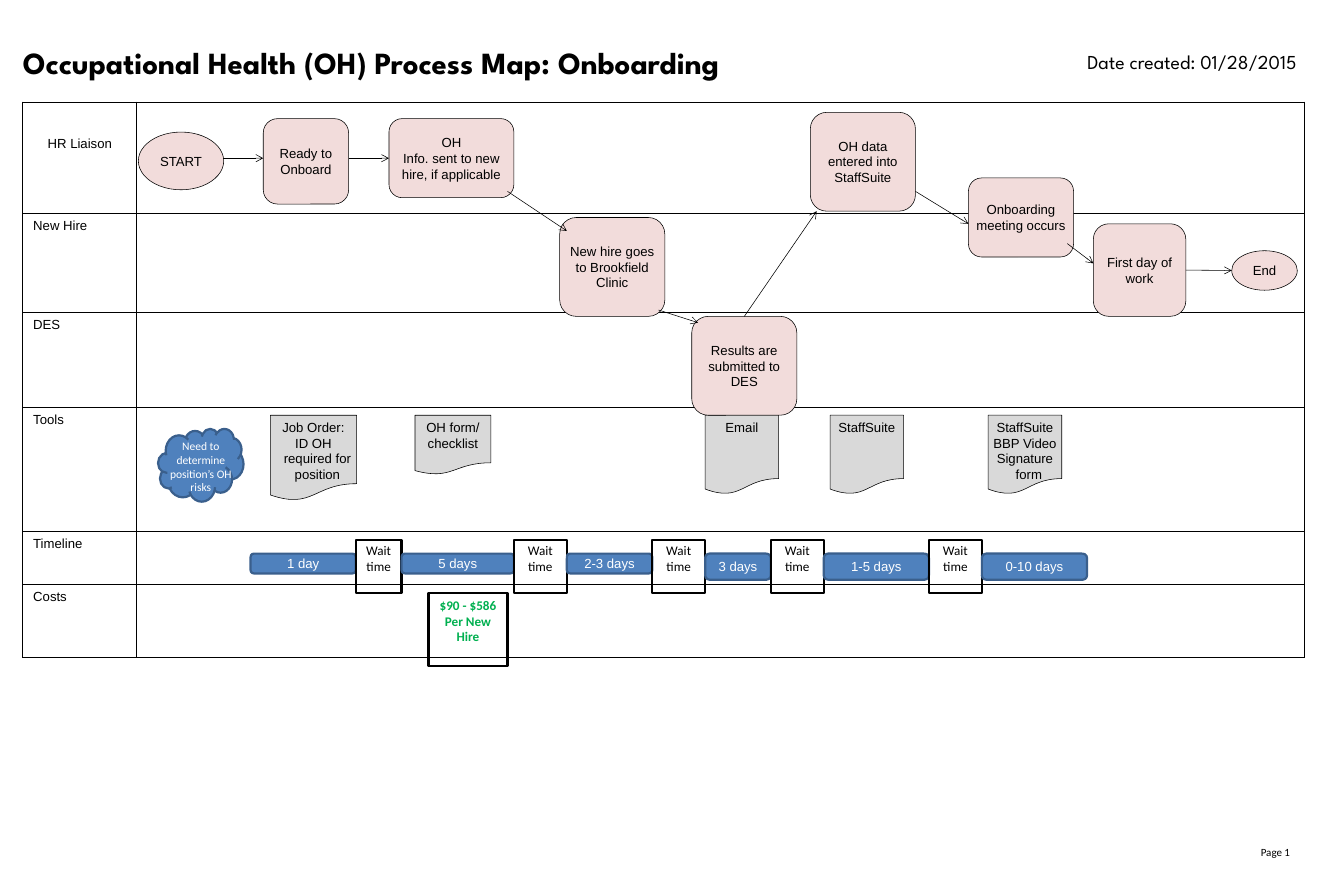
from pptx import Presentation
from pptx.dml.color import RGBColor
from pptx.enum.shapes import MSO_CONNECTOR as Conn, MSO_SHAPE as Kind
from pptx.enum.text import MSO_ANCHOR as Anchor, MSO_AUTO_SIZE as Auto, PP_ALIGN as Align
from pptx.oxml import parse_xml
from pptx.oxml.ns import nsdecls
from pptx.util import Inches, Pt

BLACK, WHITE, GREEN = "000000", "FFFFFF", "00B050"
PINK, GREY, BLUE, NAVY = "F2DCDB", "D9D9D9", "4F81BD", "3A5F8C"
BRAND = "League Spartan"


def color(code):
    return RGBColor.from_string(code)


def xml(tag, attrs="", body=""):
    return parse_xml(f"<a:{tag} {nsdecls('a')} {attrs}>{body}</a:{tag}>")


class Chart:
    """Style and drawing methods for the process map."""

    def __init__(self, slide):
        self.slide = slide
        self.items = slide.shapes

    def put(self, frame, text, size=12, face="Arial", ink=BLACK, bold=False,
            align=Align.CENTER, anchor=Anchor.MIDDLE, pad=(0.1, 0.05), hang=0):
        frame.text = text
        frame.word_wrap = True
        frame.auto_size = Auto.NONE
        frame.vertical_anchor = anchor
        frame.margin_left = frame.margin_right = Inches(pad[0])
        frame.margin_top = frame.margin_bottom = Inches(pad[1])
        for para in frame.paragraphs:
            para.alignment = align
            if hang:
                props = para._p.get_or_add_pPr()
                props.set("marL", str(Inches(hang)))
                props.set("indent", str(-Inches(hang)))
            for run in para.runs:
                font = run.font
                font.size, font.name, font.bold = Pt(size), face, bold
                font.color.rgb = color(ink)

    def title(self, box, text, **style):
        item = self.items.title
        item.left, item.top, item.width, item.height = map(Inches, box)
        self.put(item.text_frame, text, align=Align.LEFT, anchor=Anchor.TOP, **style)

    def label(self, box, text, **style):
        item = self.items.add_textbox(*map(Inches, box))
        self.put(item.text_frame, text, anchor=Anchor.TOP, **style)

    def shape(self, kind, box, text="", fill=None, line=BLACK, width=0.5, **style):
        item = self.items.add_shape(kind, *map(Inches, box))
        item.shadow.inherit = False
        if fill:
            item.fill.solid()
            item.fill.fore_color.rgb = color(fill)
        else:
            item.fill.background()
        item.line.color.rgb = color(line)
        item.line.width = Pt(width)
        if text:
            self.put(item.text_frame, text, **style)
        return item

    def arrow(self, x1, y1, x2, y2, start=None, end=None):
        item = self.items.add_connector(Conn.STRAIGHT, *map(Inches, (x1, y1, x2, y2)))
        if start:
            item.begin_connect(*start)
        if end:
            item.end_connect(*end)
        item.line.color.rgb = color(BLACK)
        item.line.width = Pt(0.5)
        item.line._get_or_add_ln().append(xml("tailEnd", 'type="arrow"'))
        item._element.spPr.append(xml("effectLst"))

    def lanes(self, left, top, cols, rows):
        high = sum(tall for _, tall in rows)
        box = map(Inches, (left, top, sum(cols), high))
        table = self.items.add_table(len(rows), len(cols), *box).table
        table.first_row = table.horz_banding = False
        for col, wide in zip(table.columns, cols):
            col.width = Inches(wide)
        for row, (name, tall) in zip(table.rows, rows):
            row.height = Inches(tall)
            row.cells[0].text = name
            for cell in row.cells:
                self.frame(cell)
        return table

    def frame(self, cell):
        props = cell._tc.get_or_add_tcPr()
        ink = f'<a:solidFill><a:srgbClr val="{BLACK}"/></a:solidFill>'
        for side in "LRTB":
            props.append(xml(f"ln{side}", f'w="{Pt(1)}"', ink))
        cell.fill.background()
        cell.margin_left = cell.margin_right = Inches(0.13)
        cell.margin_top = cell.margin_bottom = Inches(0.06)
        for run in cell.text_frame.paragraphs[0].runs:
            run.font.size, run.font.name = Pt(12), "Arial"
            run.font.color.rgb = color(BLACK)


def main():
    deck = Presentation()
    deck.slide_width, deck.slide_height = Inches(17), Inches(11)
    chart = Chart(deck.slides.add_slide(deck.slide_layouts[5]))

    # Swim lanes
    table = chart.lanes(0.29, 1.29, (1.44, 14.77), (
        ("HR Liaison", 1.41), ("New Hire", 1.25), ("DES", 1.2),
        ("Tools", 1.57), ("Timeline", 0.67), ("Costs", 0.92)))
    first = table.cell(0, 0)
    first.margin_top = Inches(0.43)
    first.text_frame.paragraphs[0].alignment = Align.CENTER

    # Heading and page number
    chart.title((0.19, 0.5, 13, 0.57), "Occupational Health (OH) Process Map: Onboarding",
                size=28, face=BRAND, bold=True)
    chart.label((13.25, 0.58, 3.25, 0.4), "Date created: 01/28/2015",
                size=18, face=BRAND, align=Align.RIGHT)
    chart.label((15.85, 10.64, 0.82, 0.27), "Page 1",
                size=10, face="Calibri", align=Align.LEFT)

    # Tools
    for left, wide, tall, text in (
            (3.42, 1.09, 1.08, "Job Order:\nID OH required for position"),
            (5.25, 0.96, 0.75, "OH form/\nchecklist"),
            (8.92, 0.93, 1, "Email"),
            (10.5, 0.93, 1, "StaffSuite"),
            (12.5, 0.93, 1, "StaffSuite\nBBP Video\nSignature form")):
        chart.shape(Kind.FLOWCHART_DOCUMENT, (left, 5.25, wide, tall), text, GREY,
                    anchor=Anchor.TOP, pad=(0.05, 0.05), hang=0.1)
    chart.shape(Kind.CLOUD, (2, 5.42, 1.08, 0.92), fill=BLUE, line=NAVY, width=2)
    chart.label((2, 5.5, 1.08, 0.81), "Need to determine position’s OH risks",
                size=10.5, face="Calibri", ink=WHITE)

    # Process steps
    for box, text in (((1.75, 1.67, 1.08, 0.73), "START"),
                      ((15.58, 3.17, 0.83, 0.5), "End")):
        chart.shape(Kind.OVAL, box, text, PINK, pad=(0, 0.06))
    steps = [
        chart.shape(Kind.ROUNDED_RECTANGLE, box, text, PINK, pad=(0.05, 0.06))
        for box, text in (
            ((3.33, 1.5, 1.08, 1.08), "Ready to Onboard"),
            ((4.92, 1.5, 1.58, 1), "OH\nInfo. sent to new hire, if applicable"),
            ((7.08, 2.75, 1.33, 1.25), "New hire goes to Brookfield Clinic"),
            ((8.75, 4, 1.33, 1.25), "Results are submitted to DES"),
            ((10.25, 1.42, 1.33, 1.25), "OH data entered into StaffSuite"),
            ((12.25, 2.25, 1.33, 1), "Onboarding meeting occurs"),
            ((13.83, 2.83, 1.17, 1.17), "First day of work"))]
    info, result, work = steps[1], steps[3], steps[6]

    # Flow arrows
    chart.arrow(2.83, 2, 3.33, 2)
    chart.arrow(4.41, 2, 4.92, 2, end=(info, 1))
    chart.arrow(6.42, 2.42, 7.17, 2.92)
    chart.arrow(8.33, 3.92, 8.83, 4.08)
    chart.arrow(9.42, 4, 10.33, 2.67, start=(result, 0))
    chart.arrow(11.58, 2.42, 12.25, 2.83)
    chart.arrow(13.5, 3.08, 13.83, 3.33)
    chart.arrow(15, 3.42, 15.58, 3.42, start=(work, 3))

    # Timeline: each span runs to the next wait box
    left = 3.17
    for text, wide, tall, wait in (
            ("1 day", 1.33, 0.25, 0.58), ("5 days", 1.42, 0.25, 0.67),
            ("2-3 days", 1.08, 0.25, 0.67), ("3 days", 0.83, 0.33, 0.67),
            ("1-5 days", 1.33, 0.33, 0.67), ("0-10 days", 1.33, 0.33, 0)):
        chart.shape(Kind.ROUNDED_RECTANGLE, (left, 7, wide, tall), text, BLUE, NAVY, 2,
                    ink=WHITE)
        left += wide
        if wait:
            chart.shape(Kind.RECTANGLE, (left, 6.83, wait, 0.67), "Wait time", width=2,
                        face="Calibri", anchor=Anchor.TOP, pad=(0.1, 0.03))
            left += wait

    # Costs
    chart.shape(Kind.RECTANGLE, (5.42, 7.5, 1, 0.92), "$90 - $586\nPer New Hire", width=2,
                face="Calibri", ink=GREEN, bold=True, anchor=Anchor.TOP)

    deck.save("out.pptx")


if __name__ == "__main__":
    main()
